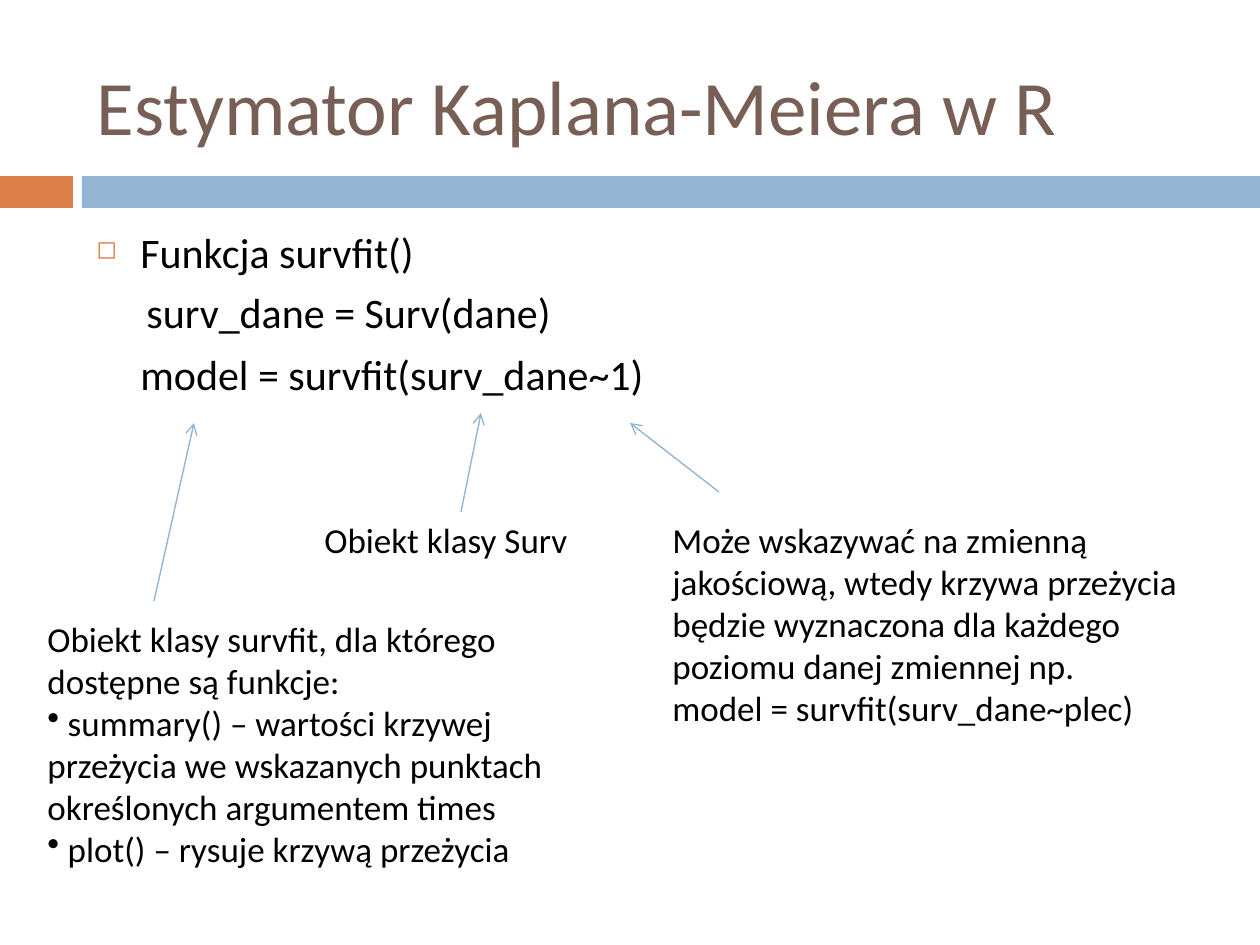
"""Build the slide on the Kaplan-Meier estimator in R."""
from dataclasses import dataclass

from lxml.etree import SubElement
from pptx import Presentation
from pptx.dml.color import RGBColor as Color
from pptx.enum.shapes import MSO_CONNECTOR as Connector, MSO_SHAPE as Shape
from pptx.enum.text import MSO_ANCHOR as Anchor, MSO_AUTO_SIZE as AutoSize, PP_ALIGN as Align
from pptx.oxml.ns import qn
from pptx.util import Emu, Pt

PX = 914400 / 126


@dataclass(frozen=True)
class Theme:
    font: str = "Calibri"
    title: str = "775F55"
    text: str = "000000"
    blue: str = "94B6D2"
    orange: str = "DD8047"
    title_size: int = 44
    body_size: int = 24
    note_size: int = 20
    line_width: float = 0.79


def px(*lengths):
    return [Emu(round(length * PX)) for length in lengths]


def write(shape, lines, size, color):
    frame = shape.text_frame
    frame.word_wrap = True
    frame.auto_size = AutoSize.NONE
    frame.text = "\n".join(lines)
    for paragraph in frame.paragraphs:
        paragraph.alignment = Align.LEFT
        for run in paragraph.runs:
            run.font.name = theme.font
            run.font.size = Pt(size)
            run.font.color.rgb = Color.from_string(color)
    return frame.paragraphs


theme = Theme()
presentation = Presentation()
presentation.slide_width, presentation.slide_height = px(1260, 945)
slide = presentation.slides.add_slide(presentation.slide_layouts[5])
shapes = slide.shapes

for left, width, color in [(0, 73, theme.orange), (82, 1178, theme.blue)]:
    band = shapes.add_shape(Shape.RECTANGLE, *px(left, 176, width, 32))
    band.shadow.inherit = False
    band.fill.solid()
    band.fill.fore_color.rgb = Color.from_string(color)
    band.line.fill.background()

title = shapes.title
title.left, title.top, title.width, title.height = px(84, 37, 1124, 136)
title.text_frame.vertical_anchor = Anchor.MIDDLE
write(title, ["Estymator Kaplana-Meiera w R"], theme.title_size, theme.title)

body = shapes.add_textbox(*px(84, 220, 1124, 620))
code_lines = ["Funkcja survfit()", "surv_dane = Surv(dane)", "model = survfit(surv_dane~1)"]
body_paragraphs = write(body, code_lines, theme.body_size, theme.text)
layout = [(44, -44, 7), (88, -38, 5.5), (44, 0, 7)]
for paragraph, (margin, indent, space) in zip(body_paragraphs, layout):
    paragraph.space_before = Pt(space)
    properties = paragraph._p.get_or_add_pPr()
    for name, length in zip(("marL", "indent"), px(margin, indent)):
        properties.set(name, str(length))

properties = body_paragraphs[0]._p.get_or_add_pPr()
bullet_color = SubElement(properties, qn("a:buClr"))
SubElement(bullet_color, qn("a:srgbClr"), val=theme.orange)
SubElement(properties, qn("a:buSzPct"), val="60000")
SubElement(properties, qn("a:buChar"), char="◻")

notes = [
    ((312, 512, 318, 55), ["Obiekt klasy Surv"]),
    ((660, 512, 556, 224), [
        "Może wskazywać na zmienną jakościową, wtedy krzywa przeżycia "
        "będzie wyznaczona dla każdego poziomu danej zmiennej np.",
        "model = survfit(surv_dane~plec)",
    ]),
    ((35, 611, 566, 267), [
        "Obiekt klasy survfit, dla którego dostępne są funkcje:",
        " summary() – wartości krzywej przeżycia we wskazanych punktach "
        "określonych argumentem times",
        " plot() – rysuje krzywą przeżycia",
    ]),
]
for box, lines in notes:
    note = shapes.add_textbox(*px(*box))
    for paragraph in write(note, lines, theme.note_size, theme.text):
        if paragraph.text.startswith(" "):
            SubElement(paragraph._p.get_or_add_pPr(), qn("a:buChar"), char="•")

for ends in [(461, 512, 481, 413), (719, 492, 630, 423), (154, 601, 194, 423)]:
    arrow = shapes.add_connector(Connector.STRAIGHT, *px(*ends))
    arrow.line.color.rgb = Color.from_string(theme.blue)
    arrow.line.width = Pt(theme.line_width)
    SubElement(arrow.line._get_or_add_ln(), qn("a:tailEnd"), type="arrow")
    SubElement(arrow._element.spPr, qn("a:effectLst"))

presentation.save("out.pptx")
